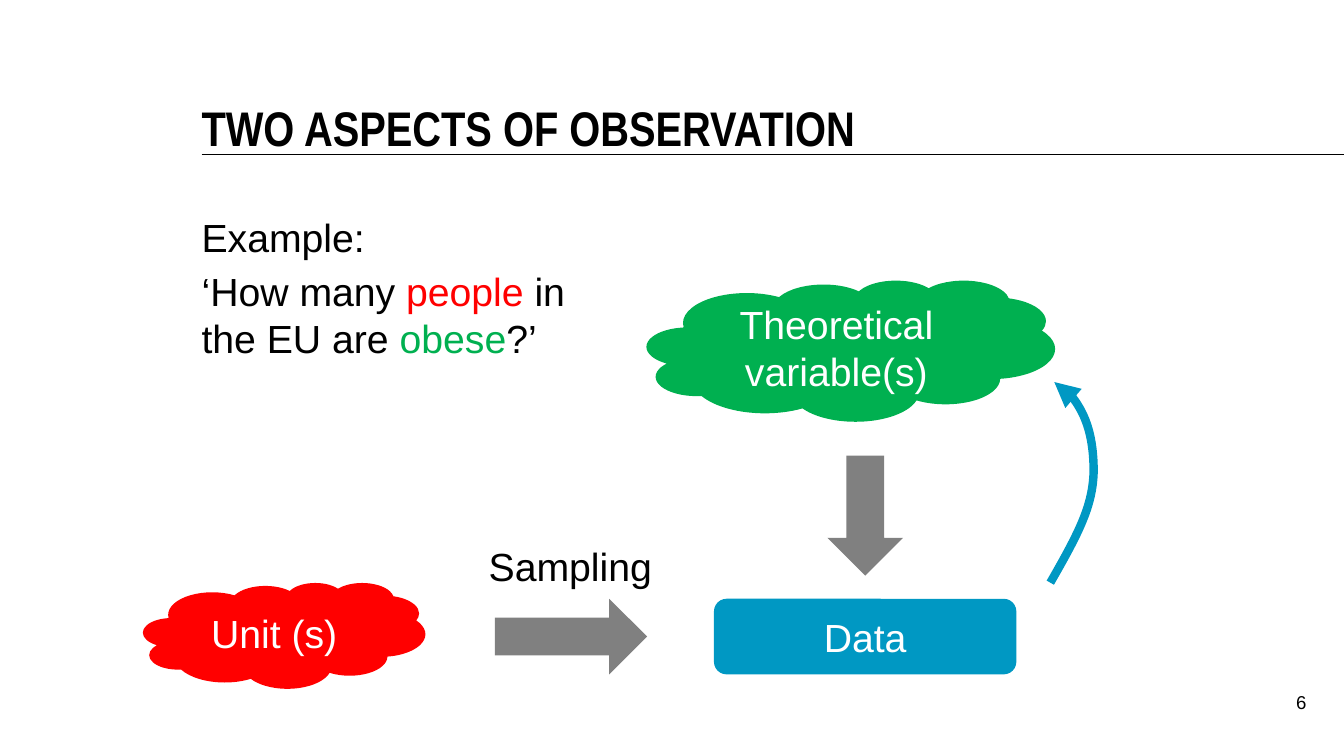
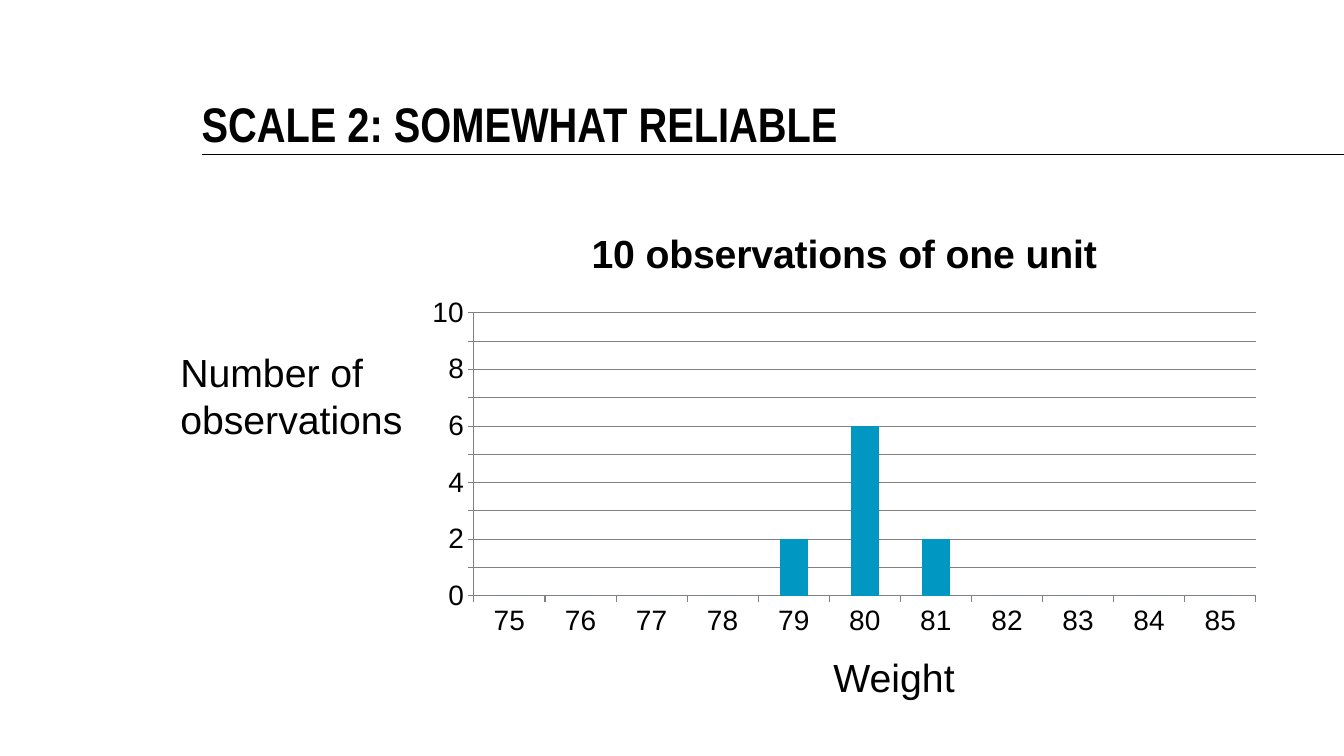
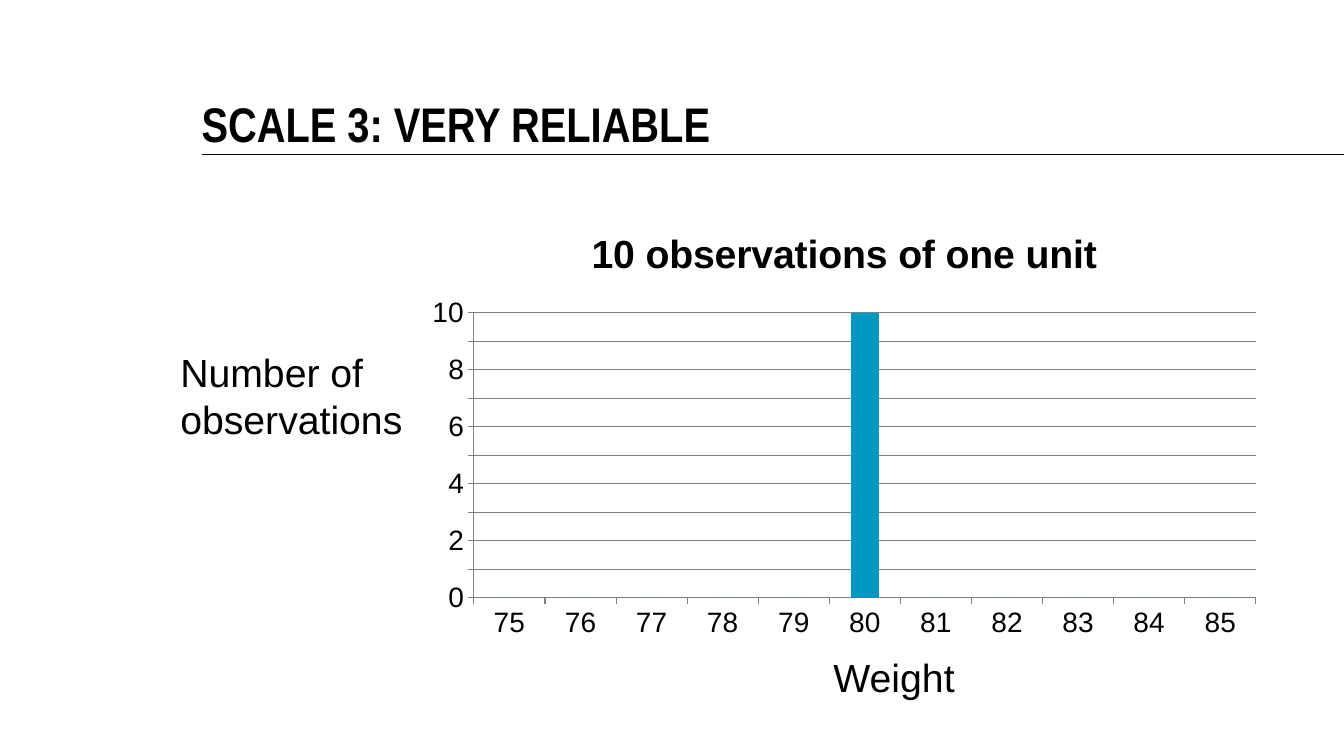
from lxml import etree
from pptx import Presentation
from pptx.chart.data import CategoryChartData as ChartData
from pptx.dml.color import RGBColor
from pptx.enum.chart import XL_CHART_TYPE as ChartType, XL_TICK_MARK as Tick
from pptx.enum.shapes import MSO_CONNECTOR as Connector, MSO_SHAPE as Shape
from pptx.enum.text import MSO_ANCHOR as Anchor, PP_ALIGN as Align
from pptx.oxml.ns import qn
from pptx.util import Inches, Pt

BLACK, WHITE, GREY = "000000", "FFFFFF", "808080"
BLUE, GREEN, RED = "0098C3", "00B050", "FF0000"
BODY = {"name": "Arial", "size": Pt(28)}
TITLE = {"name": "Arial Narrow", "size": Pt(34.7), "bold": True}
SMALL = {"name": "Arial", "size": Pt(13.3)}
LEADING = Pt(33.3)
INSETS = (7.2, 3.6, 7.2, 3.6)
COLUMNS, ROWS = 80, 45
WIDTH, HEIGHT = Inches(13.33), Inches(7.5)
LEFT = 12  # column shared by title, rule and body


def colour(code):
    return RGBColor.from_string(code)


def style(font, look, code=BLACK):
    for name, value in look.items():
        setattr(font, name, value)
    font.color.rgb = colour(code)


class Slides:
    """Holds the deck, its style and the page being filled."""

    def __init__(self):
        self.deck = Presentation()
        self.deck.slide_width, self.deck.slide_height = WIDTH, HEIGHT
        self.page = None

    def place(self, *lengths):
        """Turn alternating columns and rows into slide lengths."""
        units = (WIDTH / COLUMNS, HEIGHT / ROWS)
        return [round(n * units[i % 2]) for i, n in enumerate(lengths)]

    def new_page(self, title, top):
        self.page = self.deck.slides.add_slide(self.deck.slide_layouts[6])
        rule = self.page.shapes.add_connector(
            Connector.STRAIGHT, *self.place(LEFT, 9.18, COLUMNS, 9.18))
        rule.line.color.rgb, rule.line.width = colour(BLACK), Pt(1)
        etree.SubElement(rule._element.spPr, qn("a:effectLst"))
        self.text((LEFT, top, 65.52, 4.8), [title], TITLE, insets=(0, 0, 0, 0),
                  anchor=Anchor.BOTTOM, leading=LEADING)

    def set_paras(self, frame, paras, look, code, align, leading=None, gap=0):
        """Each paragraph is a string or a list of (text, colour) spans."""
        for number, spans in enumerate(paras):
            para = frame.add_paragraph() if number else frame.paragraphs[0]
            para.alignment, para.line_spacing = align, leading
            para.space_before = Pt(gap if number else 0)
            for words, shade in [(spans, code)] if isinstance(spans, str) else spans:
                span = para.add_run()
                span.text = words
                style(span.font, look, shade)

    def text(self, area, paras, look=BODY, insets=INSETS, anchor=Anchor.TOP,
             align=Align.LEFT, leading=None, gap=0, wrap=True):
        frame = self.page.shapes.add_textbox(*self.place(*area)).text_frame
        frame.word_wrap, frame.vertical_anchor = wrap, anchor
        for side, inset in zip(("left", "top", "right", "bottom"), insets):
            setattr(frame, "margin_" + side, Pt(inset))
        self.set_paras(frame, paras, look, BLACK, align, leading, gap)

    def shape(self, kind, area, fill, label=None):
        box = self.page.shapes.add_shape(kind, *self.place(*area))
        box.shadow.inherit = False
        box.fill.solid()
        box.fill.fore_color.rgb = colour(fill)
        box.line.fill.background()
        if label:
            box.text_frame.vertical_anchor = Anchor.MIDDLE
            self.set_paras(box.text_frame, [label], BODY, WHITE, Align.CENTER)

    def curved_arrow(self, points, code, width):
        """Start point followed by three points for each Bézier part."""
        start, *rest = [self.place(*point) for point in points]
        builder = self.page.shapes.build_freeform(*start)
        builder.add_line_segments(rest, close=False)
        curve = builder.convert_to_shape()
        curve.shadow.inherit = False
        curve.fill.background()
        curve.line.color.rgb, curve.line.width = colour(code), Pt(width)
        # Merge each three straight steps into one cubic step
        steps = list(curve._element.iter(qn("a:lnTo")))
        for first in range(0, len(steps), 3):
            cubic = etree.SubElement(steps[first].getparent(), qn("a:cubicBezTo"))
            for step in steps[first:first + 3]:
                cubic.append(step[0])
                step.getparent().remove(step)
        outline = curve._element.spPr.find(qn("a:ln"))
        etree.SubElement(outline, qn("a:tailEnd"), type="triangle")

    def column_chart(self, area, title, categories, values):
        data = ChartData()
        data.categories = categories
        data.add_series(title, values)
        chart = self.page.shapes.add_chart(
            ChartType.COLUMN_CLUSTERED, *self.place(*area), data).chart
        style(chart.font, {"name": "Arial", "size": Pt(18)})
        chart.has_legend = False
        chart.has_title = True
        self.set_paras(chart.chart_title.text_frame, [title], {**BODY, "bold": True},
                       BLACK, Align.CENTER)
        plot = chart.plots[0]
        plot.vary_by_categories, plot.gap_width = False, 150
        fill = plot.series[0].format.fill
        fill.solid()
        fill.fore_color.rgb = colour(BLUE)
        # Axes
        scale = chart.value_axis
        for name, value in {"minimum_scale": 0, "maximum_scale": 10, "major_unit": 1,
                            "has_major_gridlines": True}.items():
            setattr(scale, name, value)
        for axis in (chart.category_axis, scale):
            axis.major_tick_mark, axis.minor_tick_mark = Tick.OUTSIDE, Tick.NONE
            style(axis.tick_labels.font, {"name": "Arial", "size": Pt(20)})
        for lined in (chart.category_axis, scale, scale.major_gridlines):
            lined.format.line.color.rgb = colour(GREY)
            lined.format.line.width = Pt(0.75)


def observation_page(slides):
    slides.new_page("TWO ASPECTS OF OBSERVATION", 4.5)
    slides.text((74.46, 40.5, 3.3, 3.12), ["6"], SMALL, insets=(7.2, 3.6, 0, 3.6),
                align=Align.RIGHT, leading=Pt(20))
    # Flow from units and variables to data
    row, height = 35.64, 4.5
    slides.shape(Shape.ROUNDED_RECTANGLE, (42.5, row, 18, height), BLUE, "Data")
    slides.shape(Shape.RIGHT_ARROW, (29.46, row, 9.06, height), GREY)
    slides.shape(Shape.DOWN_ARROW, (49.25, 27.12, 4.5, 7.14), GREY)
    slides.shape(Shape.CLOUD, (38.5, 16.68, 24.3, 8.4), GREEN, "Theoretical variable(s)")
    slides.shape(Shape.CLOUD, (8.52, 34.68, 16.8, 6.3), RED, "Unit (s)")
    slides.text((28.5, 31.98, 11.04, 3.42), ["Sampling"], wrap=False)
    # Example question
    question = [("‘How many ", BLACK), ("people", RED), (" in the EU are ", BLACK),
                ("obese", GREEN), ("?’", BLACK)]
    slides.text((LEFT, 12.42, 25.38, 10.8), ["Example:", question],
                insets=(0, 3.6, 7.2, 3.6), leading=LEADING, gap=5.6)
    # Way back from data to variables
    slides.curved_arrow([(62.52, 34.68), (64.32, 31.56), (65.04, 30.06), (65.1, 28.08),
                         (65.1, 26.1), (64.38, 23.46), (62.76, 22.74)], BLUE, 6)


def scale_page(slides, title, counts, chart_height):
    """Counts maps a weight to its observations; other weights have none."""
    weights = range(75, 86)
    slides.new_page(title, 4.26)
    slides.column_chart((24.72, 12.36, 51.06, chart_height), "10 observations of one unit",
                        [str(weight) for weight in weights],
                        [counts.get(weight, 0) for weight in weights])
    slides.text((49.02, 38.58, 8.52, 3.42), ["Weight"], wrap=False)
    slides.text((10.14, 20.46, 14.58, 6.24), ["Number of", "observations"], wrap=False)


def main():
    slides = Slides()
    observation_page(slides)
    scale_page(slides, "SCALE 2: SOMEWHAT RELIABLE", {79: 2, 80: 6, 81: 2}, 26.1)
    scale_page(slides, "SCALE 3: VERY RELIABLE", {80: 10}, 26.22)
    slides.deck.save("out.pptx")


if __name__ == "__main__":
    main()
